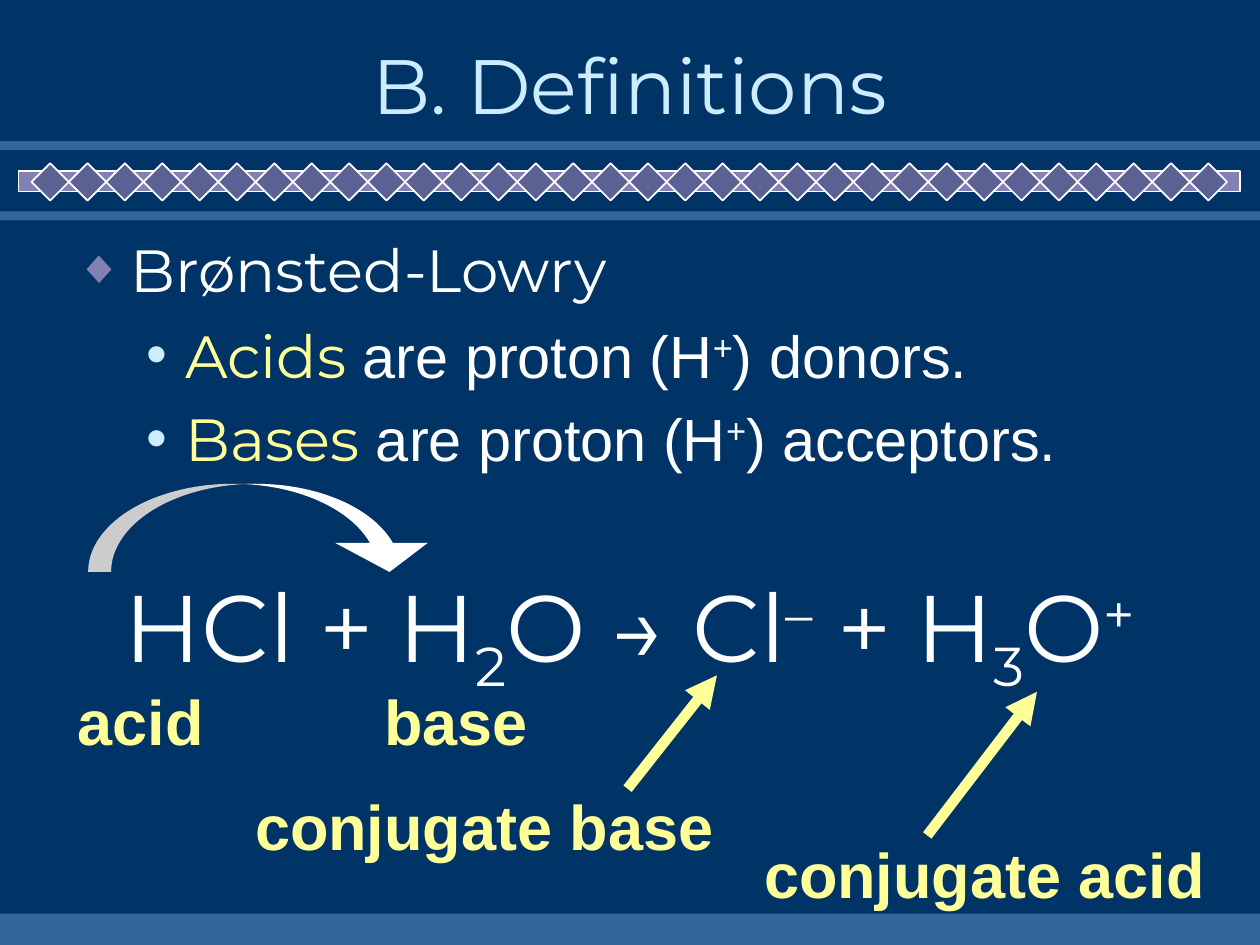
from lxml.etree import SubElement
from pptx import Presentation
from pptx.dml.color import RGBColor
from pptx.enum.shapes import MSO_CONNECTOR as CONNECTOR, MSO_SHAPE as SHAPE
from pptx.enum.text import MSO_ANCHOR as ANCHOR, MSO_AUTO_SIZE as AUTO_SIZE, PP_ALIGN as ALIGN
from pptx.oxml.ns import qn
from pptx.util import Pt

COLORS = {
    "background": "003366", "band": "336699", "bar": "8381B3", "diamond": "5B6192",
    "white": "FFFFFF", "title": "CCECFF", "key": "FFFF99", "shadow": "000000",
}
HEADING_FONT, BODY_FONT = "Montserrat", "Arial"
SUB, SUPER = -25000, 30000
DIAMOND_COUNT, DIAMOND_SIZE, DIAMOND_STEP = 32, 21.36, 21.35


def rgb(name):
    return RGBColor.from_string(COLORS[name])


def add_run(paragraph, text, size=34, font=HEADING_FONT, color="white", bold=False, baseline=0):
    run = paragraph.add_run()
    run.text = text
    run.font.size, run.font.name, run.font.bold = Pt(size), font, bold
    run.font.color.rgb = rgb(color)
    if baseline:
        run.font._element.set("baseline", str(baseline))
    return run


def add_bullet(paragraph, character, color, margin, hanging, percent=100):
    paragraph.space_before = Pt(6.8)
    properties = paragraph._p.get_or_add_pPr()
    properties.set("marL", str(Pt(margin)))
    properties.set("indent", str(-Pt(hanging)))
    bullet_color = SubElement(properties, qn("a:buClr"))
    SubElement(bullet_color, qn("a:srgbClr"), val=COLORS[color])
    SubElement(properties, qn("a:buSzPct"), val=str(percent * 1000))
    SubElement(properties, qn("a:buFont"), typeface=BODY_FONT)
    SubElement(properties, qn("a:buChar"), char=character)


def add_text_box(shapes, left, top, width, height, wrap=True):
    frame = shapes.add_textbox(Pt(left), Pt(top), Pt(width), Pt(height)).text_frame
    frame.word_wrap = wrap
    frame.auto_size = AUTO_SIZE.NONE
    return frame


def add_label(shapes, text, left, top, width, wrap=True):
    paragraph = add_text_box(shapes, left, top, width, 50.4, wrap).paragraphs[0]
    paragraph.alignment = ALIGN.CENTER if wrap else ALIGN.LEFT
    add_run(paragraph, text, size=36, font=BODY_FONT, color="key", bold=True)


def add_block(shapes, kind, left, top, width, height, fill, outline=None):
    shape = shapes.add_shape(kind, Pt(left), Pt(top), Pt(width), Pt(height))
    shape.shadow.inherit = False
    shape.fill.solid()
    shape.fill.fore_color.rgb = rgb(fill)
    if outline:
        shape.line.color.rgb = rgb(outline)
        shape.line.width = Pt(1)
    else:
        shape.line.fill.background()
    return shape


def add_arrow(shapes, start, end):
    arrow = shapes.add_connector(CONNECTOR.STRAIGHT, *(Pt(value) for value in start + end))
    arrow.line.color.rgb = rgb("key")
    arrow.line.width = Pt(6)
    SubElement(arrow.line._get_or_add_ln(), qn("a:tailEnd"), type="triangle")
    SubElement(arrow._element.spPr, qn("a:effectLst"))


def add_decoration(shapes):
    for top, height in ((80.6, 5.2), (120.8, 5.2), (522, 18)):
        add_block(shapes, SHAPE.RECTANGLE, 0, top, 720, height, "band")
    add_block(shapes, SHAPE.RECTANGLE, 10.6, 97.8, 697.8, 11.6, "bar", "white")
    for index in range(DIAMOND_COUNT):
        add_block(shapes, SHAPE.DIAMOND, 18 + index * DIAMOND_STEP, 93.3,
                  DIAMOND_SIZE, DIAMOND_SIZE, "diamond", "white")


def format_title(title):
    title.left, title.top, title.width, title.height = Pt(54), Pt(18), Pt(612), Pt(60)
    frame = title.text_frame
    frame.vertical_anchor = ANCHOR.MIDDLE
    frame.auto_size = AUTO_SIZE.NONE
    paragraph = frame.paragraphs[0]
    paragraph.alignment = ALIGN.CENTER
    run = add_run(paragraph, "B. Definitions", size=44, color="title")
    effects = SubElement(run.font._element, qn("a:effectLst"))
    shadow = SubElement(effects, qn("a:outerShdw"), dist=str(Pt(3)), dir="2700000")
    SubElement(shadow, qn("a:srgbClr"), val=COLORS["shadow"])
    run.font._element.find(qn("a:solidFill")).addnext(effects)


def add_definitions(shapes):
    heading = add_text_box(shapes, 36, 129.6, 684, 54).paragraphs[0]
    add_bullet(heading, "◆", "bar", 31.5, 31.5, percent=80)
    add_run(heading, "Brønsted-Lowry")

    frame = add_text_box(shapes, 36, 178.6, 684, 120)
    for index, (term, role) in enumerate((("Acids", "donors"), ("Bases", "acceptors"))):
        paragraph = frame.add_paragraph() if index else frame.paragraphs[0]
        add_bullet(paragraph, "•", "title", 63, 22.5)
        add_run(paragraph, term, color="key")
        add_run(paragraph, " are proton (H", font=BODY_FONT)
        add_run(paragraph, "+", font=BODY_FONT, baseline=SUPER)
        add_run(paragraph, f") {role}.", font=BODY_FONT)


def add_equation(shapes):
    paragraph = add_text_box(shapes, 0, 321, 720, 72).paragraphs[0]
    paragraph.alignment = ALIGN.CENTER
    for text, baseline in (("HCl + H", 0), ("2", SUB), ("O → Cl", 0), ("–", SUPER),
                           (" + H", 0), ("3", SUB), ("O", 0), ("+", SUPER)):
        add_run(paragraph, text, size=54, baseline=baseline)


def add_proton_transfer(shapes):
    arrow = add_block(shapes, SHAPE.CURVED_UP_ARROW, 50.4, 276.5, 198.7, 50.4, "white")
    for index, value in enumerate((0.26, 1.05, 0.33)):
        arrow.adjustments[index] = value
    arrow._element.spPr.xfrm.set("flipV", "1")


def add_conjugate(shapes, text, left, top, width, start, end):
    group = shapes.add_group_shape()
    add_label(group.shapes, text, left, top, width)
    add_arrow(group.shapes, start, end)


def main():
    presentation = Presentation()
    presentation.slide_width, presentation.slide_height = Pt(720), Pt(540)
    slide = presentation.slides.add_slide(presentation.slide_layouts[5])
    slide.background.fill.solid()
    slide.background.fill.fore_color.rgb = rgb("background")
    shapes = slide.shapes

    add_decoration(shapes)
    format_title(shapes.title)
    add_definitions(shapes)
    add_equation(shapes)
    add_conjugate(shapes, "conjugate acid", 427.6, 473.8, 270, (529.9, 477.4), (592.6, 395.3))
    add_conjugate(shapes, "conjugate base", 136.8, 446.4, 280, (358.6, 450.7), (409.7, 385.9))
    add_proton_transfer(shapes)
    add_label(shapes, "base", 212.4, 386.6, 96.5, wrap=False)
    add_label(shapes, "acid", 37.4, 386.6, 86.4, wrap=False)
    presentation.save("out.pptx")


if __name__ == "__main__":
    main()
